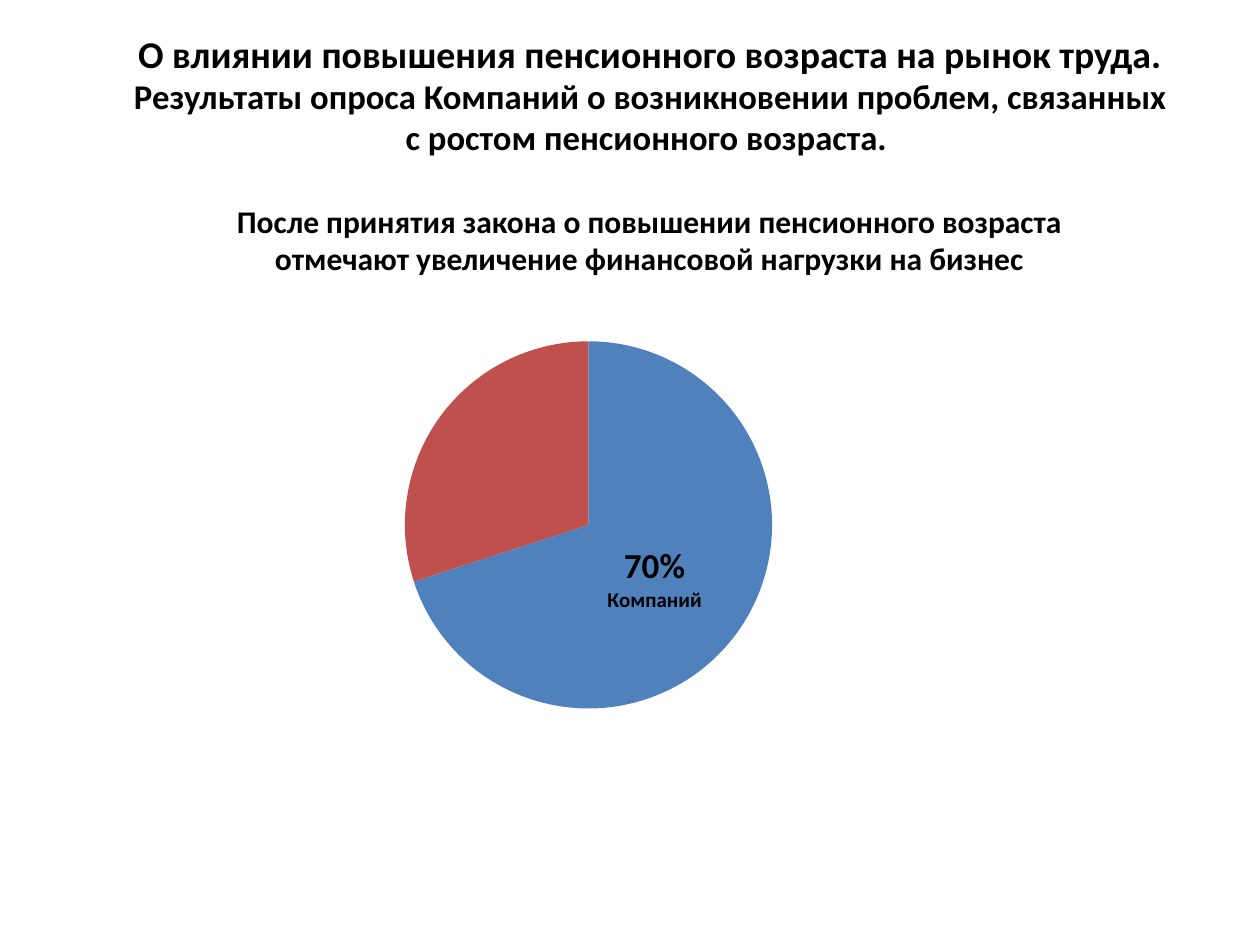
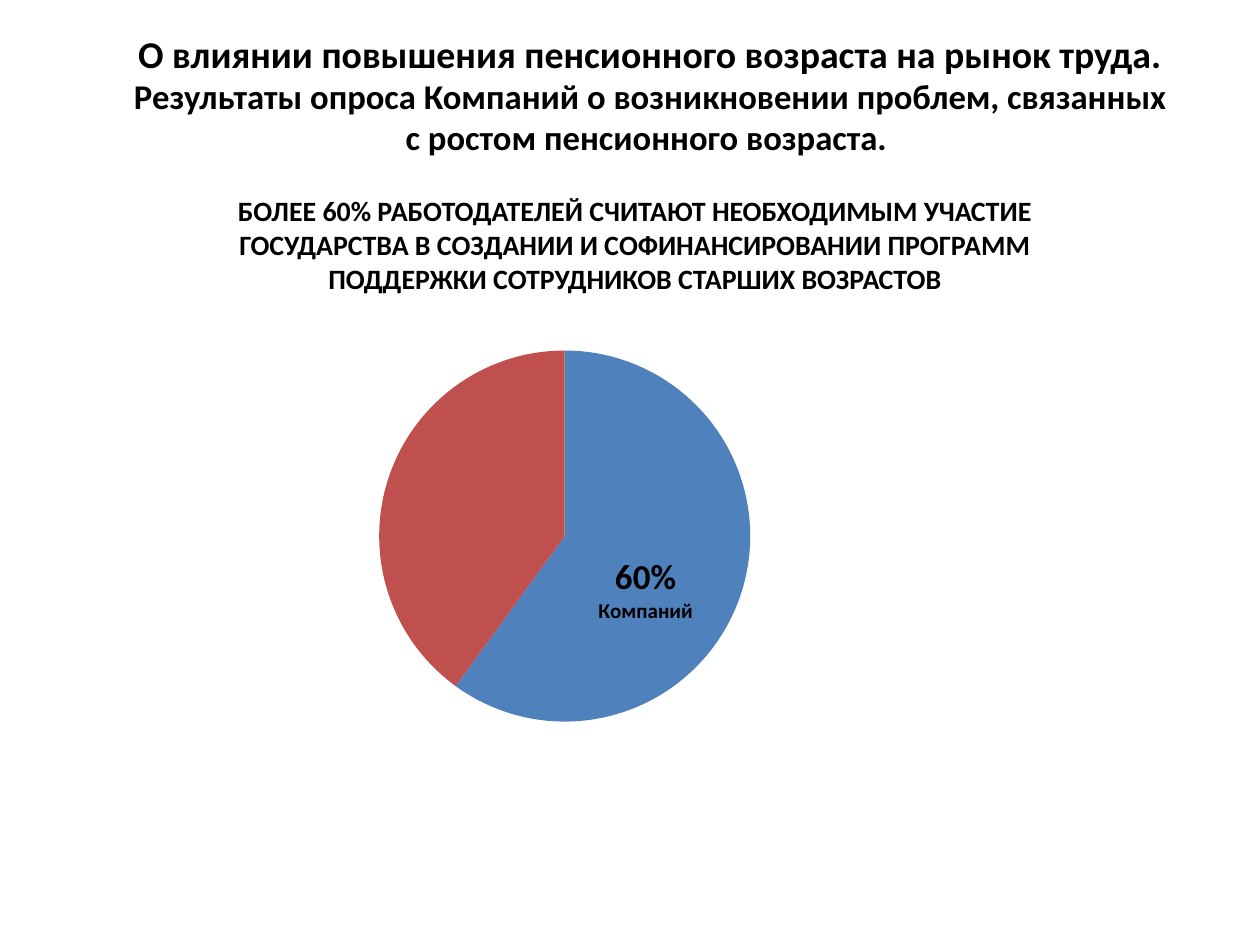
from lxml import etree
from pptx import Presentation
from pptx import util as u
from pptx.chart.data import CategoryChartData
from pptx.dml.color import RGBColor
from pptx.enum import chart as charts, text
from pptx.oxml.ns import qn

WIDTH, HEIGHT = u.Inches(10), u.Inches(7.5)
COLUMNS, ROWS = 100, 75
FONT, INK = "Calibri", "000000"
SLICE_COLOURS = ("4F81BD", "C0504D")
TITLE_BOX = (9.1, 2.1, 85, 11)
TITLE_RUNS = (
    ("О влиянии повышения пенсионного возраста на рынок труда. ", 21.6),
    ("Результаты опроса Компаний о возникновении проблем, "
     "связанных с ростом пенсионного возраста. ", 19.8),
)
SURVEYS = (
    dict(
        caption="После принятия закона о повышении пенсионного возраста "
                "отмечают увеличение финансовой нагрузки на бизнес",
        caption_box=(17.7, 15.5, 67.7, 7.1), caption_size=18,
        share=70, chart_box=(18, 25.7, 63.8, 34.7),
        pie_area=(0.22, 0.04, 0.46, 0.84), label_shift=(-0.01, 0),
    ),
    dict(
        caption="БОЛЕЕ 60% РАБОТОДАТЕЛЕЙ СЧИТАЮТ НЕОБХОДИМЫМ УЧАСТИЕ "
                "ГОСУДАРСТВА В СОЗДАНИИ И СОФИНАНСИРОВАНИИ ПРОГРАММ "
                "ПОДДЕРЖКИ СОТРУДНИКОВ СТАРШИХ ВОЗРАСТОВ",
        caption_box=(15.4, 14.9, 70, 10.2), caption_size=16,
        share=60, chart_box=(20.1, 26.5, 57.5, 33.1),
        pie_area=(0.17, 0.04, 0.52, 0.89), label_shift=(-0.01, 0.06),
    ),
)


def colour(value):
    return RGBColor.from_string(value)


def grid(box):
    """Turn columns and rows into left, top, width and height."""
    left, top, width, height = box
    return (int(WIDTH * left / COLUMNS), int(HEIGHT * top / ROWS),
            int(WIDTH * width / COLUMNS), int(HEIGHT * height / ROWS))


def style(font, size, bold=True):
    font.name, font.size, font.bold = FONT, u.Pt(size), bold
    font.color.rgb = colour(INK)


def manual_layout(**values):
    layout = etree.Element(qn("c:layout"))
    manual = etree.SubElement(layout, qn("c:manualLayout"))
    for name, value in values.items():
        etree.SubElement(manual, qn(f"c:{name}")).set("val", str(value))
    return layout


def add_title(slide, box):
    title = slide.shapes.title
    title.left, title.top, title.width, title.height = grid(box)
    frame = title.text_frame
    frame.auto_size = text.MSO_AUTO_SIZE.NONE
    frame.vertical_anchor = text.MSO_ANCHOR.MIDDLE
    paragraph = frame.paragraphs[0]
    paragraph.alignment = text.PP_ALIGN.CENTER
    paragraph.line_spacing = 0.97
    for words, size in TITLE_RUNS:
        run = paragraph.add_run()
        run.text = words
        style(run.font, size)


def add_caption(slide, box, words, size):
    frame = slide.shapes.add_textbox(*grid(box)).text_frame
    frame.word_wrap = True
    paragraph = frame.paragraphs[0]
    paragraph.text = words
    paragraph.alignment = text.PP_ALIGN.CENTER
    style(paragraph.font, size)


def add_pie(slide, box, share, pie_area, label_shift):
    data = CategoryChartData()
    data.categories = ["1", "2"]
    data.add_series("Series 1", (share, 100 - share))
    chart = slide.shapes.add_chart(
        charts.XL_CHART_TYPE.PIE, *grid(box), data).chart
    chart.has_title = chart.has_legend = False
    style(chart.font, 10, bold=False)
    plot = chart.plots[0]
    plot.vary_by_categories = False
    points = plot.series[0].points
    for index, value in enumerate(SLICE_COLOURS):
        fill = points[index].format.fill
        fill.solid()
        fill.fore_color.rgb = colour(value)

    label = points[0].data_label
    frame = label.text_frame
    frame.text = f"{share}%\nКомпаний"
    for paragraph, size in zip(frame.paragraphs, (20, 12)):
        style(paragraph.font, size)
        for run in paragraph.runs:
            style(run.font, size)
    label.position = charts.XL_LABEL_POSITION.CENTER

    shift_x, shift_y = label_shift
    label_index = chart.element.xpath(".//c:dLbl/c:idx")[0]
    label_index.addnext(manual_layout(x=shift_x, y=shift_y))
    plot_area = chart.element.xpath(".//c:plotArea")[0]
    for layout in plot_area.findall(qn("c:layout")):
        plot_area.remove(layout)
    x, y, width, height = pie_area
    plot_area.insert(0, manual_layout(
        layoutTarget="inner", xMode="edge", yMode="edge",
        x=x, y=y, w=width, h=height))


def add_survey_slide(presentation, survey):
    slide = presentation.slides.add_slide(presentation.slide_layouts[5])
    add_title(slide, TITLE_BOX)
    add_caption(slide, survey["caption_box"], survey["caption"],
                survey["caption_size"])
    add_pie(slide, survey["chart_box"], survey["share"],
            survey["pie_area"], survey["label_shift"])


def main():
    presentation = Presentation()
    presentation.slide_width, presentation.slide_height = WIDTH, HEIGHT
    for survey in SURVEYS:
        add_survey_slide(presentation, survey)
    presentation.save("out.pptx")


if __name__ == "__main__":
    main()
